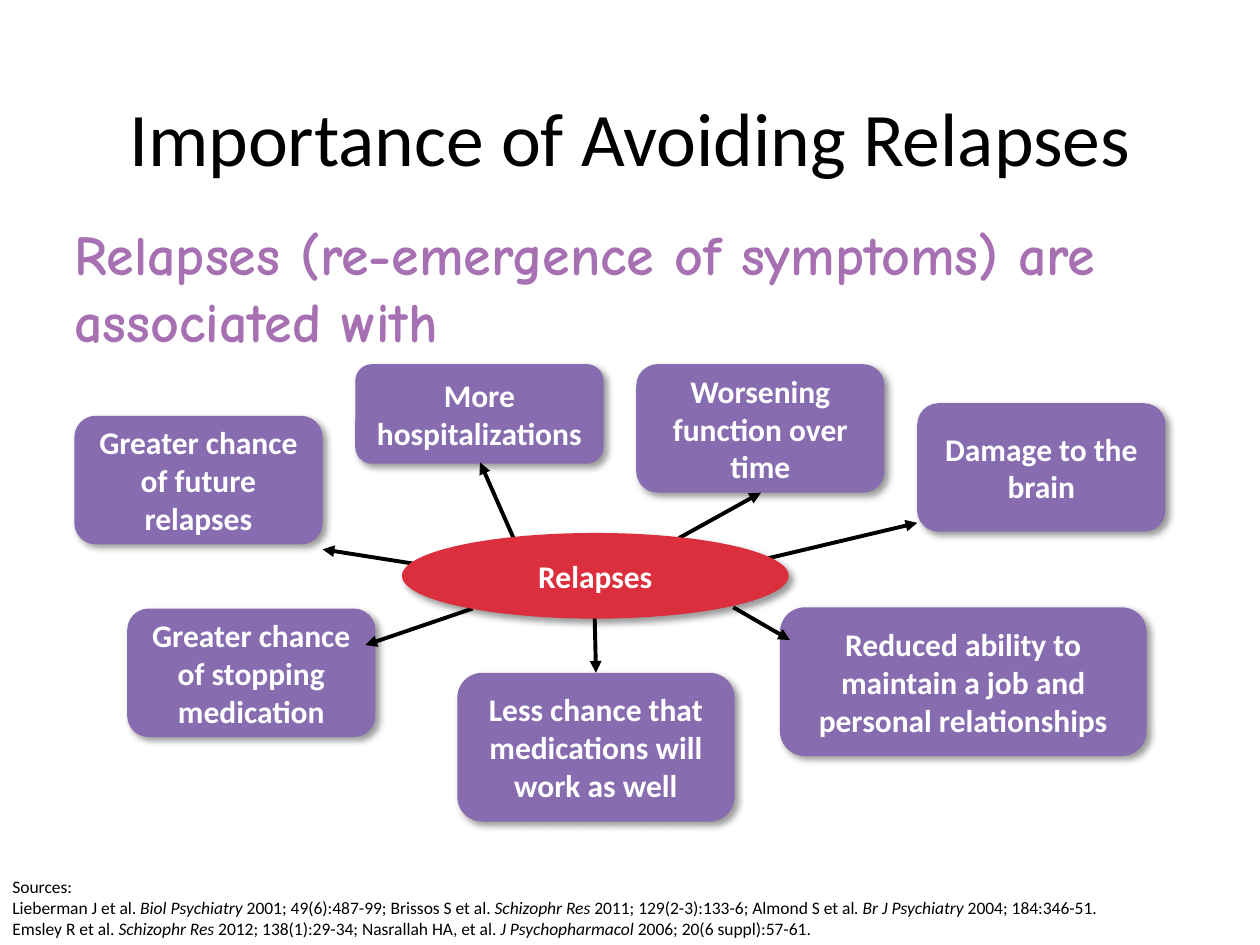
import dataclasses

import lxml.etree
import pptx
import pptx.dml.color
import pptx.enum.shapes
import pptx.enum.text
import pptx.oxml
import pptx.oxml.ns
import pptx.util

Inches = pptx.util.Inches
Pt = pptx.util.Pt
ALIGN = pptx.enum.text.PP_ALIGN
ANCHOR = pptx.enum.text.MSO_ANCHOR
SHAPE = pptx.enum.shapes.MSO_SHAPE
qn = pptx.oxml.ns.qn


@dataclasses.dataclass(frozen=True)
class Theme:
    font: str = "Calibri"
    lead_font: str = "Comic Neue"
    black: str = "000000"
    white: str = "FFFFFF"
    lead: str = "A770B2"
    outcome: str = "886CB0"
    hub: str = "DB2F3E"
    title_size: float = 43.2
    lead_size: float = 32
    label_size: float = 18
    source_size: float = 10
    arrow_width: float = 2.25


@dataclasses.dataclass(frozen=True)
class Box:
    left: float
    top: float
    width: float
    height: float


@dataclasses.dataclass(frozen=True)
class Outcome:
    label: str
    box: Box
    arrow_from: tuple[float, float]
    arrow_to: tuple[float, float]


THEME = Theme()
WIDTH, TALL, TALLER = 1.97, 1.02, 1.18

OUTCOMES = [
    Outcome("Greater chance of future relapses", Box(0.59, 3.3, WIDTH, TALL),
            (3.64, 4.53), (2.56, 4.36)),
    Outcome("More\nhospitalizations", Box(2.82, 2.89, WIDTH, 0.79),
            (4.08, 4.28), (3.81, 3.67)),
    Outcome("Worsening function over time", Box(5.05, 2.89, WIDTH, TALL),
            (5.39, 4.27), (6.04, 3.91)),
    Outcome("Damage to the brain", Box(7.28, 3.2, WIDTH, TALL),
            (6.1, 4.43), (7.28, 4.15)),
    Outcome("Reduced ability to maintain a job and personal relationships",
            Box(6.19, 4.82, 2.91, TALLER), (5.82, 4.82), (6.27, 5.08)),
    Outcome("Less chance that medications will work as well",
            Box(3.63, 5.34, 2.2, TALLER), (4.72, 4.9), (4.73, 5.34)),
    Outcome("Greater chance of stopping medication", Box(1.01, 4.83, WIDTH, TALL),
            (3.75, 4.83), (2.9, 5.12)),
]

# Asterisks enclose italics
SOURCES = [
    "Sources:\nLieberman J et al. *Biol Psychiatry* 2001; 49(6):487-99; "
    "Brissos S et al. *Schizophr Res* 2011; 129(2-3):133-6; "
    "Almond S et al*. Br J Psychiatry* 2004; 184:346-51.",
    "Emsley R et al. *Schizophr Res* 2012; 138(1):29-34; "
    "Nasrallah HA, et al. *J Psychopharmacol *2006; 20(6 suppl):57-61.",
]


def rgb(color: str) -> pptx.dml.color.RGBColor:
    return pptx.dml.color.RGBColor.from_string(color)


def place(box: Box) -> tuple:
    return tuple(Inches(length) for length in dataclasses.astuple(box))


def write(frame, *paragraphs: str, size: float, color: str = THEME.black,
          font: str = THEME.font, bold: bool = False, align=ALIGN.LEFT,
          anchor=ANCHOR.TOP, line_spacing: float | None = None) -> None:
    """Fill a text frame; line feeds break lines and asterisks mark italics."""
    frame.word_wrap = True
    frame.vertical_anchor = anchor
    for index, text in enumerate(paragraphs):
        paragraph = frame.add_paragraph() if index else frame.paragraphs[0]
        paragraph.alignment = align
        paragraph.line_spacing = line_spacing
        for part, piece in enumerate(text.split("*")):
            for row, words in enumerate(piece.split("\n")):
                if row:
                    paragraph.add_line_break()
                run = paragraph.add_run()
                run.text = words
                run.font.name = font
                run.font.size = Pt(size)
                run.font.bold = bold
                run.font.italic = part % 2 == 1
                run.font.color.rgb = rgb(color)


def add_text(shapes, box: Box, *paragraphs: str, **text_format) -> None:
    write(shapes.add_textbox(*place(box)).text_frame, *paragraphs, **text_format)


def add_shadow(shape) -> None:
    shape.shadow.inherit = False
    effects = shape._element.spPr.find(qn("a:effectLst"))
    shadow = lxml.etree.SubElement(
        effects, qn("a:outerShdw"), blurRad=str(Pt(4)), dist=str(Pt(3)),
        dir=str(45 * 60000), algn="tl", rotWithShape="0")
    tint = lxml.etree.SubElement(shadow, qn("a:srgbClr"), val=THEME.black)
    lxml.etree.SubElement(tint, qn("a:alpha"), val="40000")


def add_node(shapes, kind, box: Box, label: str, fill: str) -> None:
    node = shapes.add_shape(kind, *place(box))
    node.fill.solid()
    node.fill.fore_color.rgb = rgb(fill)
    node.line.fill.background()
    add_shadow(node)
    write(node.text_frame, label, size=THEME.label_size, color=THEME.white,
          bold=True, align=ALIGN.CENTER, anchor=ANCHOR.MIDDLE)


def add_arrow(shapes, start: tuple[float, float], end: tuple[float, float]) -> None:
    arrow = shapes.add_connector(
        pptx.enum.shapes.MSO_CONNECTOR.STRAIGHT,
        *(Inches(length) for length in start + end))
    arrow.line.color.rgb = rgb(THEME.black)
    arrow.line.width = Pt(THEME.arrow_width)
    lxml.etree.SubElement(arrow.line._get_or_add_ln(), qn("a:tailEnd"), type="triangle")
    lxml.etree.SubElement(arrow._element.spPr, qn("a:effectLst"))


def main() -> None:
    deck = pptx.Presentation()
    deck.slide_width, deck.slide_height = Inches(10), Inches(7.5)
    shapes = deck.slides.add_slide(deck.slide_layouts[6]).shapes

    # Title, lead sentence and sources
    add_text(shapes, Box(0.69, 0.4, 8.62, 1.45), "Importance of Avoiding Relapses",
             size=THEME.title_size, align=ALIGN.CENTER, anchor=ANCHOR.MIDDLE,
             line_spacing=0.9)
    add_text(shapes, Box(0.49, 1.69, 9.01, 4.92),
             "Relapses (re-emergence of symptoms) are associated with",
             size=THEME.lead_size, font=THEME.lead_font, color=THEME.lead, bold=True)
    add_text(shapes, Box(0, 6.89, 9.58, 0.61), *SOURCES,
             size=THEME.source_size, anchor=ANCHOR.BOTTOM)

    # Each outcome is grouped with its arrow
    for outcome in OUTCOMES:
        group = shapes.add_group_shape().shapes
        add_node(group, SHAPE.ROUNDED_RECTANGLE, outcome.box, outcome.label,
                 THEME.outcome)
        add_arrow(group, outcome.arrow_from, outcome.arrow_to)

    # Hub covers the arrow starts
    add_node(shapes, SHAPE.OVAL, Box(3.19, 4.23, 3.07, 0.68), "Relapses", THEME.hub)

    deck.save("out.pptx")


if __name__ == "__main__":
    main()
